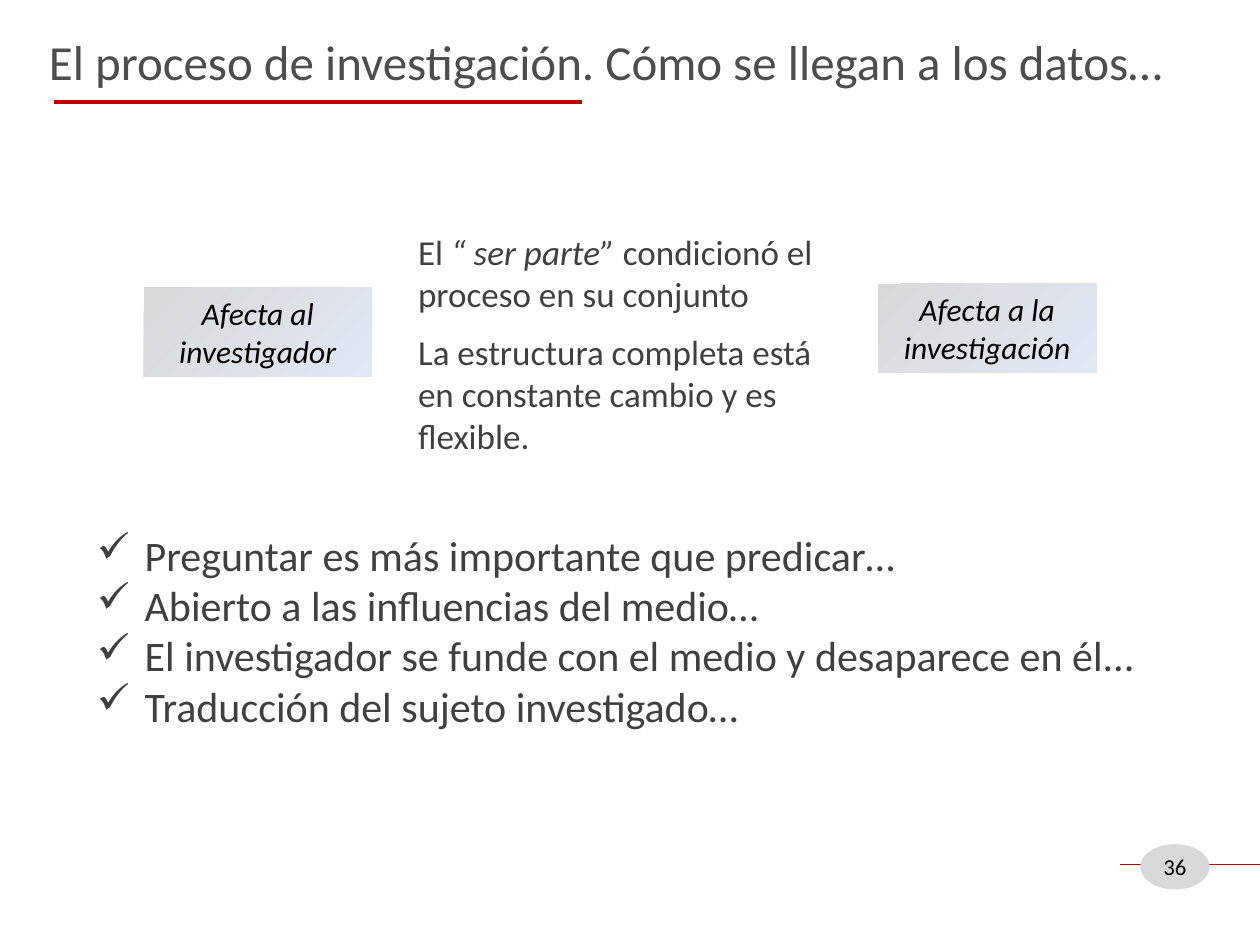
from lxml import etree
from pptx import Presentation
from pptx import util as u
from pptx.dml.color import RGBColor
from pptx.enum import shapes, text
from pptx.oxml.ns import qn

TITLE = RGBColor(0x4D, 0x4D, 0x4D)
BODY = RGBColor(0x40, 0x40, 0x40)
BLACK = RGBColor(0, 0, 0)
GREY = RGBColor(0xD9, 0xD9, 0xD9)
PALE_BLUE = RGBColor(0xE1, 0xE8, 0xF5)
RED = RGBColor(0xC0, 0, 0)


def add_run(p, words, size, color, italic=False):
    """Append one formatted run to a paragraph."""
    r = p.add_run()
    r.text = words
    r.font.name = "Calibri"
    r.font.size = u.Pt(size)
    r.font.color.rgb = color
    r.font.italic = italic


def add_text(s, box, size, color, *runs):
    """Add a wrapping text box of (words, italic) runs."""
    tf = s.shapes.add_textbox(*map(u.Inches, box)).text_frame
    tf.word_wrap = True
    for words, italic in runs:
        add_run(tf.paragraphs[0], words, size, color, italic)


def add_checklist(s, box, items):
    """Add a text box with one check-marked paragraph per item."""
    tf = s.shapes.add_textbox(*map(u.Inches, box)).text_frame
    tf.word_wrap = True
    for i, item in enumerate(items):
        p = tf.add_paragraph() if i else tf.paragraphs[0]
        add_run(p, item, 24, BODY)
        pPr = p._p.get_or_add_pPr()
        indent = u.Inches(0.38)
        pPr.set("marL", str(indent))
        pPr.set("indent", str(-indent))
        etree.SubElement(pPr, qn("a:buChar")).set("char", "✓")


def add_label(s, kind, box, words, size, italic=False):
    """Add a borderless grey shape with centred text."""
    sp = s.shapes.add_shape(kind, *map(u.Inches, box))
    sp.shadow.inherit = False
    sp.fill.solid()
    sp.fill.fore_color.rgb = GREY
    sp.line.fill.background()
    tf = sp.text_frame
    tf.word_wrap = True
    tf.vertical_anchor = text.MSO_ANCHOR.MIDDLE
    p = tf.paragraphs[0]
    p.alignment = text.PP_ALIGN.CENTER
    add_run(p, words, size, BLACK, italic)
    return sp


def add_effect(s, box, words):
    """Add an italic label with a diagonal gradient."""
    sp = add_label(s, shapes.MSO_SHAPE.RECTANGLE, box, words, 18, True)
    sp.fill.gradient()
    sp.fill.gradient_angle = 315
    for stop, color, position in zip(sp.fill.gradient_stops, (GREY, PALE_BLUE), (0, 1)):
        stop.color.rgb = color
        stop.position = position


def add_rule(s, x1, x2, y, width):
    """Add a horizontal red line."""
    line = s.shapes.add_connector(
        shapes.MSO_CONNECTOR.STRAIGHT, *map(u.Inches, (x1, y, x2, y)))
    line.line.color.rgb = RED
    line.line.width = u.Pt(width)
    etree.SubElement(line._element.spPr, qn("a:effectLst"))


def add_page_number(s, number):
    """Add the page number in an oval on a thin rule."""
    add_rule(s, 8.89, 10, 6.86, 0.75)
    sp = add_label(s, shapes.MSO_SHAPE.OVAL, (9.05, 6.7, 0.55, 0.36), number, 13)
    tf = sp.text_frame
    tf.margin_left = tf.margin_right = tf.margin_top = tf.margin_bottom = 0


def main():
    """Build the slide and save it."""
    prs = Presentation()
    prs.slide_width, prs.slide_height = u.Inches(10), u.Inches(7.5)
    s = prs.slides.add_slide(prs.slide_layouts[6])
    add_text(s, (0.29, 0.2, 9.17, 0.57), 28, TITLE,
             ("El proceso de investigación. Cómo se llegan a los datos…", False))
    add_text(s, (3.22, 2.57, 3.54, 1.11), 20, BODY,
             ("La estructura completa está en constante cambio y es flexible.", False))
    add_effect(s, (6.97, 2.25, 1.73, 0.71), "Afecta a la investigación")
    add_effect(s, (1.14, 2.28, 1.81, 0.71), "Afecta al investigador")
    add_checklist(s, (0.67, 4.15, 8.79, 1.72), (
        "Preguntar es más importante que predicar…",
        "Abierto a las influencias del medio…",
        "El investigador se funde con el medio y desaparece en él...",
        "Traducción del sujeto investigado…"))
    add_text(s, (3.22, 1.78, 3.54, 0.77), 20, BODY, ("El ", False),
             ("“ ser parte”", True), (" condicionó el proceso en su conjunto", False))
    add_rule(s, 0.43, 4.62, 0.81, 2.5)
    add_page_number(s, "36")
    prs.save("out.pptx")


if __name__ == "__main__":
    main()
